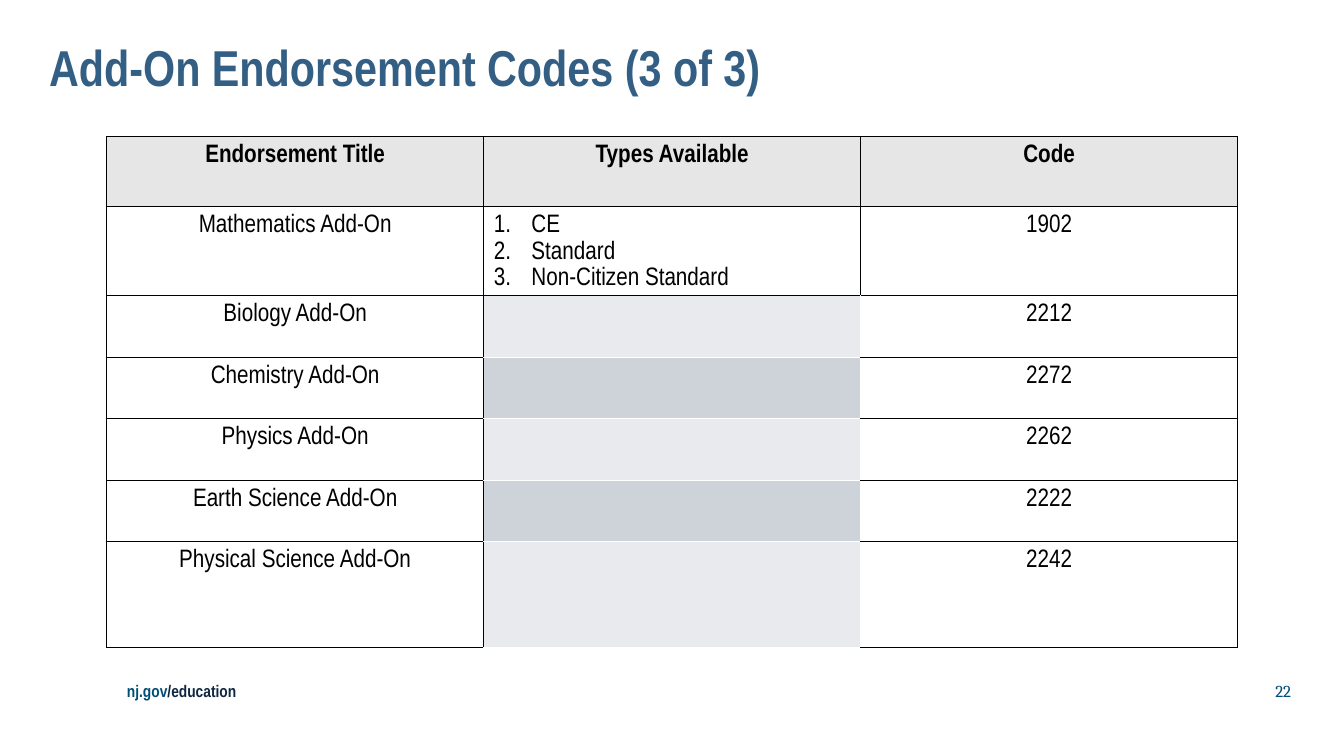
from dataclasses import dataclass

from lxml import etree
from pptx import Presentation
from pptx.dml.color import RGBColor
from pptx.enum.text import MSO_ANCHOR, PP_ALIGN
from pptx.oxml.ns import qn
from pptx.util import Cm, Pt

LEFT, CENTER, RIGHT = PP_ALIGN.LEFT, PP_ALIGN.CENTER, PP_ALIGN.RIGHT
TOP, MIDDLE = MSO_ANCHOR.TOP, MSO_ANCHOR.MIDDLE


@dataclass(frozen=True)
class Theme:
    sans: str = "Arial Narrow"
    serif: str = "Cambria"
    title_color: str = "345F84"
    link_color: str = "004E75"
    navy: str = "0E2841"
    black: str = "000000"
    white: str = "FFFFFF"
    header_fill: str = "E7E6E6"
    bands: tuple = ("E8EAED", "CED2D9")
    title_size: float = 36
    table_size: float = 18
    footer_size: float = 12
    table_spacing: float = 18.8
    black_line: float = 0.85
    white_line: float = 1


THEME = Theme()

HEADERS = ("Endorsement Title", "Types Available", "Code")
ENDORSEMENTS = (
    ("Mathematics Add-On", "1902"),
    ("Biology Add-On", "2212"),
    ("Chemistry Add-On", "2272"),
    ("Physics Add-On", "2262"),
    ("Earth Science Add-On", "2222"),
    ("Physical Science Add-On", "2242"),
)
TYPES = ("CE", "Standard", "Non-Citizen Standard")
ROW_HEIGHTS = (1.76, 2.22, 1.55, 1.55, 1.55, 1.55, 2.67)


def write_text(paragraph, text, size, color, font=THEME.sans, bold=False,
               align=LEFT, spacing=None):
    """Add one formatted run to a paragraph."""
    paragraph.alignment = align
    if spacing is not None:
        paragraph.line_spacing = spacing
    run = paragraph.add_run()
    run.text = text
    run.font.name = font
    run.font.size = Pt(size)
    run.font.bold = bold
    run.font.color.rgb = RGBColor.from_string(color)


def add_text_box(slide, left, top, width, height, anchor):
    """Add a box without margins and return its first paragraph."""
    box = slide.shapes.add_textbox(Cm(left), Cm(top), Cm(width), Cm(height))
    frame = box.text_frame
    frame.word_wrap = True
    frame.vertical_anchor = anchor
    frame.margin_left = frame.margin_right = 0
    frame.margin_top = frame.margin_bottom = 0
    return frame.paragraphs[0]


def number_paragraph(paragraph):
    properties = paragraph._p.get_or_add_pPr()
    properties.set("marL", str(Cm(0.95)))
    properties.set("indent", str(-Cm(0.95)))
    etree.SubElement(properties, qn("a:buFont"), typeface="+mj-lt")
    etree.SubElement(properties, qn("a:buAutoNum"), type="arabicPeriod")


def set_borders(cell, white_sides):
    """Draw all four sides: white where listed, otherwise black."""
    properties = cell._tc.get_or_add_tcPr()
    for index, side in enumerate("LRTB"):
        white = side in white_sides
        width = THEME.white_line if white else THEME.black_line
        line = etree.Element(qn(f"a:ln{side}"), w=str(Pt(width)))
        fill = etree.SubElement(line, qn("a:solidFill"))
        etree.SubElement(fill, qn("a:srgbClr"),
                         val=THEME.white if white else THEME.black)
        properties.insert(index, line)


def style_cell(cell, fill=None, white_sides=""):
    if fill:
        cell.fill.solid()
        cell.fill.fore_color.rgb = RGBColor.from_string(fill)
    else:
        cell.fill.background()
    set_borders(cell, white_sides)


def write_cell(cell, text, bold=False):
    write_text(cell.text_frame.paragraphs[0], text, THEME.table_size, THEME.black,
               bold=bold, align=CENTER, spacing=Pt(THEME.table_spacing))


def add_title(slide, left, top, width, height):
    paragraph = add_text_box(slide, left, top, width, height, TOP)
    write_text(paragraph, "Add-On Endorsement Codes (3 of 3)", THEME.title_size,
               THEME.title_color, bold=True, spacing=0.9)


def add_endorsement_table(slide, left, top, width):
    frame = slide.shapes.add_table(len(ROW_HEIGHTS), len(HEADERS), Cm(left), Cm(top),
                                   Cm(width), Cm(sum(ROW_HEIGHTS)))
    table = frame.table
    table.first_row = table.horz_banding = False
    for column in table.columns:
        column.width = Cm(width / len(HEADERS))
    for row, height in zip(table.rows, ROW_HEIGHTS):
        row.height = Cm(height)

    # Header row
    for column, header in enumerate(HEADERS):
        style_cell(table.cell(0, column), THEME.header_fill)
        write_cell(table.cell(0, column), header, bold=True)

    # Endorsements; only the first lists its types, the others have a shaded cell
    for row, (name, code) in enumerate(ENDORSEMENTS, start=1):
        name_cell, types_cell, code_cell = (table.cell(row, i) for i in range(3))
        write_cell(name_cell, name)
        write_cell(code_cell, code)
        style_cell(name_cell)
        if row == 1:
            style_cell(types_cell)
            style_cell(code_cell)
        else:
            style_cell(types_cell, THEME.bands[row % 2], "RB" if row == 2 else "RTB")
            style_cell(code_cell, white_sides="L")

    # Numbered types
    types_frame = table.cell(1, 1).text_frame
    for index, name in enumerate(TYPES):
        paragraph = types_frame.add_paragraph() if index else types_frame.paragraphs[0]
        number_paragraph(paragraph)
        write_text(paragraph, name, THEME.table_size, THEME.black,
                   spacing=Pt(THEME.table_spacing))


def add_footer(slide, left, top, width, height):
    half = 14.27
    site = add_text_box(slide, left, top, half, height, MIDDLE)
    write_text(site, "nj.gov", THEME.footer_size, THEME.link_color, bold=True)
    write_text(site, "/education", THEME.footer_size, THEME.navy, bold=True)
    number = add_text_box(slide, left + width - half, top, half, height, MIDDLE)
    write_text(number, "22", THEME.footer_size, THEME.link_color,
               font=THEME.serif, align=RIGHT)


def main():
    presentation = Presentation()
    presentation.slide_width = Cm(33.87)
    presentation.slide_height = Cm(19.05)
    slide = presentation.slides.add_slide(presentation.slide_layouts[6])
    add_footer(slide, 3.2, 17.15, 29.34, 0.5)
    add_title(slide, 1.24, 1.09, 31.32, 1.17)
    add_endorsement_table(slide, 2.69, 3.45, 28.5)
    presentation.save("out.pptx")


if __name__ == "__main__":
    main()
